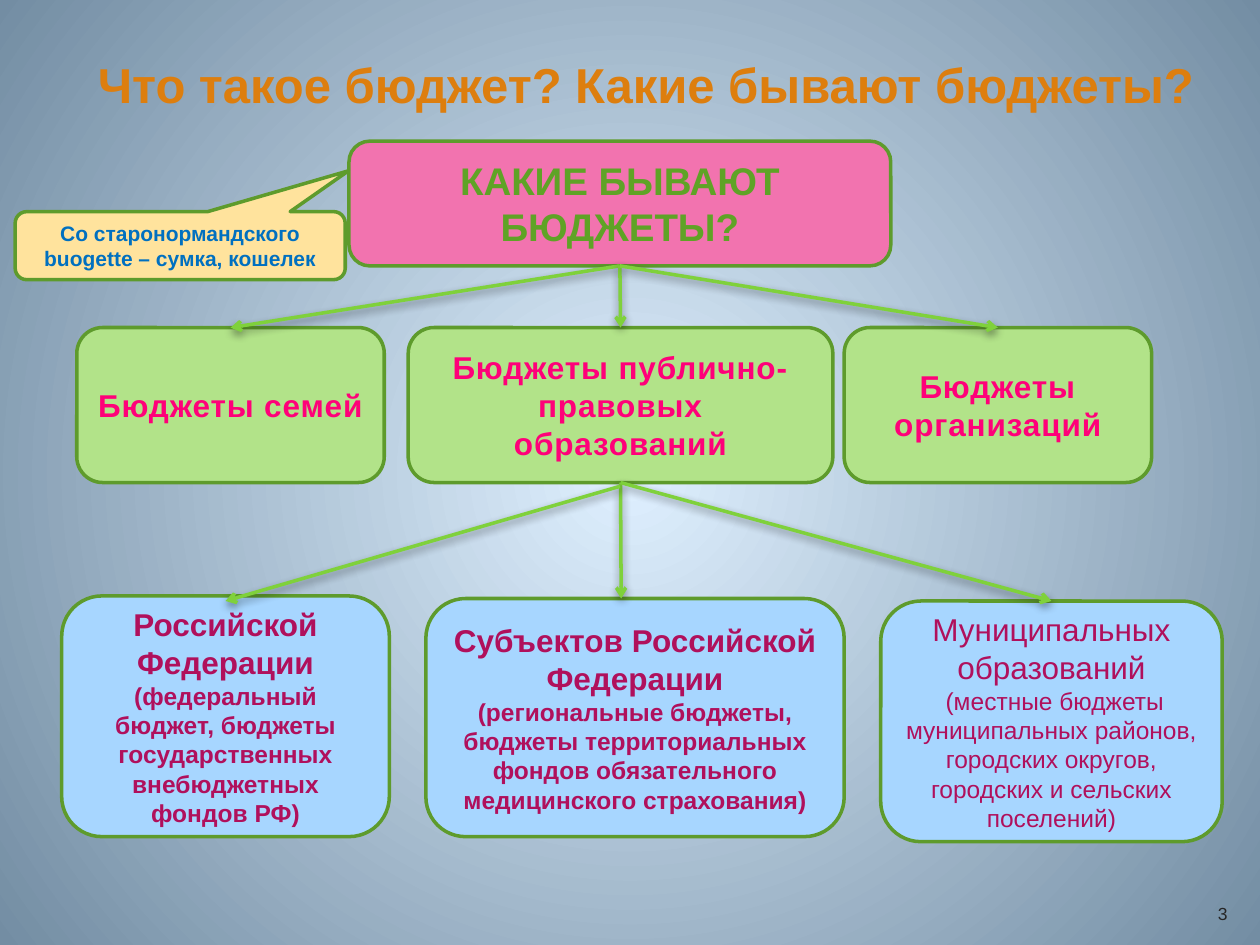
from dataclasses import dataclass
from typing import Optional

from lxml import etree
from pptx import Presentation
from pptx import util as u
from pptx.dml.color import RGBColor
from pptx.enum import shapes, text
from pptx.oxml import parse_xml
from pptx.oxml.ns import nsdecls, qn


@dataclass(frozen=True)
class Theme:
    font: str = "Arial"
    title: str = "DD7E0E"
    head: str = "5FA326"
    pink: str = "F273AF"
    green: str = "B2E389"
    blue: str = "A7D6FF"
    cream: str = "FFE39D"
    edge: str = "5E9B2C"
    arrow: str = "7FD13B"
    hot: tuple = ("FF0079", "B40055")
    plum: str = "B0105C"
    note: str = "0070C0"
    dark: str = "262626"
    core: str = "DFF0FF"
    rim: str = "738DA3"
    big: int = 28
    mid: int = 22
    main: int = 18
    small: int = 14
    tiny: int = 12
    page: int = 10
    width: int = 2


T = Theme()


@dataclass(frozen=True)
class Run:
    words: str
    size: int
    color: object
    bold: bool = True


@dataclass(frozen=True)
class Box:
    at: tuple
    fill: str
    paras: list
    kind: int = shapes.MSO_SHAPE.ROUNDED_RECTANGLE
    adj: tuple = ()


@dataclass(frozen=True)
class Link:
    start: tuple
    end: tuple
    top: Optional[object] = None
    low: Optional[object] = None


def rgb(code: str) -> RGBColor:
    return RGBColor.from_string(code)


def place(shape, at: tuple) -> None:
    shape.left, shape.top, shape.width, shape.height = map(u.Inches, at)


def add_run(para, item: Run):
    run = para.add_run()
    run.text = item.words
    font = run.font
    font.name, font.size, font.bold = T.font, u.Pt(item.size), item.bold
    if isinstance(item.color, str):
        font.fill.solid()
        font.fill.fore_color.rgb = rgb(item.color)
    else:
        font.fill.gradient()
        font.fill.gradient_angle = 270
        for stop, code, pos in zip(font.fill.gradient_stops, item.color, (0.25, 1)):
            stop.color.rgb, stop.position = rgb(code), pos
        run._r.get_or_add_rPr().set("spc", "50")
    return run


def write(shape, paras: list) -> None:
    frame = shape.text_frame
    frame.word_wrap = True
    frame.auto_size = text.MSO_AUTO_SIZE.NONE
    frame.vertical_anchor = text.MSO_ANCHOR.MIDDLE
    for i, runs in enumerate(paras):
        para = frame.add_paragraph() if i else frame.paragraphs[0]
        para.alignment = text.PP_ALIGN.CENTER
        for item in runs:
            add_run(para, item)


def paint(shape, fill: str) -> None:
    shape.fill.solid()
    shape.fill.fore_color.rgb = rgb(fill)
    shape.line.color.rgb = rgb(T.edge)
    shape.line.width = u.Pt(T.width)


def draw_box(slide, box: Box):
    shape = slide.shapes.add_shape(box.kind, *map(u.Inches, box.at))
    shape.shadow.inherit = False
    for i, val in enumerate(box.adj):
        shape.adjustments[i] = val
    paint(shape, box.fill)
    write(shape, box.paras)
    return shape


def shade(blur: int, dist: int, angle: int, alpha: int):
    """Return an effect list with one black outer shadow."""
    return parse_xml(
        f'<a:effectLst {nsdecls("a")}><a:outerShdw blurRad="{u.Pt(blur)}" '
        f'dist="{u.Pt(dist)}" dir="{angle * 60000}" algn="ctr" rotWithShape="0">'
        f'<a:srgbClr val="000000"><a:alpha val="{alpha * 1000}"/></a:srgbClr>'
        '</a:outerShdw></a:effectLst>')


def draw_link(slide, link: Link) -> None:
    line = slide.shapes.add_connector(
        shapes.MSO_CONNECTOR.STRAIGHT, *map(u.Inches, link.start + link.end))
    if link.top is not None:
        line.begin_connect(link.top, 2)
    if link.low is not None:
        line.end_connect(link.low, 0)
    line.line.color.rgb = rgb(T.arrow)
    line.line.width = u.Pt(T.width)
    etree.SubElement(line.line._get_or_add_ln(), qn("a:tailEnd"), type="arrow")
    line._element.spPr.append(shade(5, 2, 90, 43))


def draw_back(slide) -> None:
    stops = "".join(f'<a:gs pos="{pos}"><a:srgbClr val="{code}"/></a:gs>'
                    for pos, code in ((0, T.core), (100000, T.rim)))
    slide._element.cSld.insert(0, parse_xml(
        f'<p:bg {nsdecls("p", "a")}><p:bgPr><a:gradFill rotWithShape="1">'
        f'<a:gsLst>{stops}</a:gsLst><a:path path="circle">'
        '<a:fillToRect l="50000" t="50000" r="50000" b="50000"/></a:path>'
        '</a:gradFill><a:effectLst/></p:bgPr></p:bg>'))


def draw_title(slide) -> None:
    title = slide.shapes.title
    place(title, (0.5, 0.18, 9.25, 0.97))
    write(title, [[Run("Что такое бюджет? Какие бывают бюджеты?", T.big, T.title)]])
    props = title.text_frame.paragraphs[0].runs[0]._r.rPr
    props.find(qn("a:solidFill")).addnext(shade(4, 3, 45, 60))


def draw_head(slide):
    """Turn the body placeholder into the rounded top box."""
    head = slide.placeholders[1]
    place(head, (2.77, 1.12, 4.3, 0.99))
    head._element.spPr.find(qn("a:xfrm")).addnext(parse_xml(
        f'<a:prstGeom {nsdecls("a")} prst="roundRect"><a:avLst/></a:prstGeom>'))
    paint(head, T.pink)
    write(head, [[Run("КАКИЕ БЫВАЮТ БЮДЖЕТЫ?", T.mid, T.head)]])
    props = head.text_frame.paragraphs[0]._p.get_or_add_pPr()
    props.set("marL", "0")
    props.set("indent", "0")
    etree.SubElement(props, qn("a:buNone"))
    return head


def main() -> None:
    deck = Presentation()
    deck.slide_width, deck.slide_height = u.Inches(10), u.Inches(7.5)
    slide = deck.slides.add_slide(deck.slide_layouts[1])
    draw_back(slide)
    draw_title(slide)
    head = draw_head(slide)

    page = slide.shapes.add_textbox(*map(u.Inches, (9.45, 7.05, 0.51, 0.4)))
    write(page, [[Run("3", T.page, T.dark, False)]])

    kinds = [draw_box(slide, Box((left, 2.6, wide, 1.23), T.green,
                                 [[Run(words, T.main, T.hot)]]))
             for left, wide, words in (
                 (0.61, 2.44, "Бюджеты семей"),
                 (3.24, 3.37, "Бюджеты публично-правовых образований"),
                 (6.7, 2.44, "Бюджеты организаций"))]

    fed = [Run("Российской Федерации ", T.main, T.plum),
           Run("(федеральный бюджет, бюджеты государственных "
               "внебюджетных фондов РФ)", T.small, T.plum)]
    region = [[Run("Субъектов Российской Федерации", T.main, T.plum)],
              [Run("(региональные бюджеты, бюджеты территориальных фондов "
                   "обязательного медицинского страхования)", T.small, T.plum)]]
    town = [[Run("Муниципальных образований", T.main, T.plum, False)],
            [Run(" (местные бюджеты муниципальных районов, городских округов, "
                 "городских и сельских поселений)", T.small, T.plum, False)]]
    levels = [draw_box(slide, Box(at, T.blue, paras)) for at, paras in (
        ((0.49, 4.73, 2.6, 1.91), [fed]),
        ((3.38, 4.75, 3.32, 1.89), region),
        ((6.99, 4.77, 2.71, 1.91), town))]

    hub = kinds[1]
    links = [Link((4.92, 3.83), (4.93, 4.75), hub),
             Link((4.92, 3.83), (8.35, 4.77), hub, levels[2]),
             Link((4.92, 3.86), (1.79, 4.77))]
    links += [Link((4.92, 2.11), (x, 2.6), head, kind)
              for x, kind in zip((1.83, 4.92, 7.92), kinds)]
    for link in links:
        draw_link(slide, link)

    draw_box(slide, Box(
        (0.12, 1.68, 2.62, 0.54), T.cream,
        [[Run("Со старонормандского buogette – сумка, кошелек", T.tiny, T.note)]],
        shapes.MSO_SHAPE.ROUNDED_RECTANGULAR_CALLOUT, (0.51, -1.1, 0.17)))
    deck.save("out.pptx")


if __name__ == "__main__":
    main()
